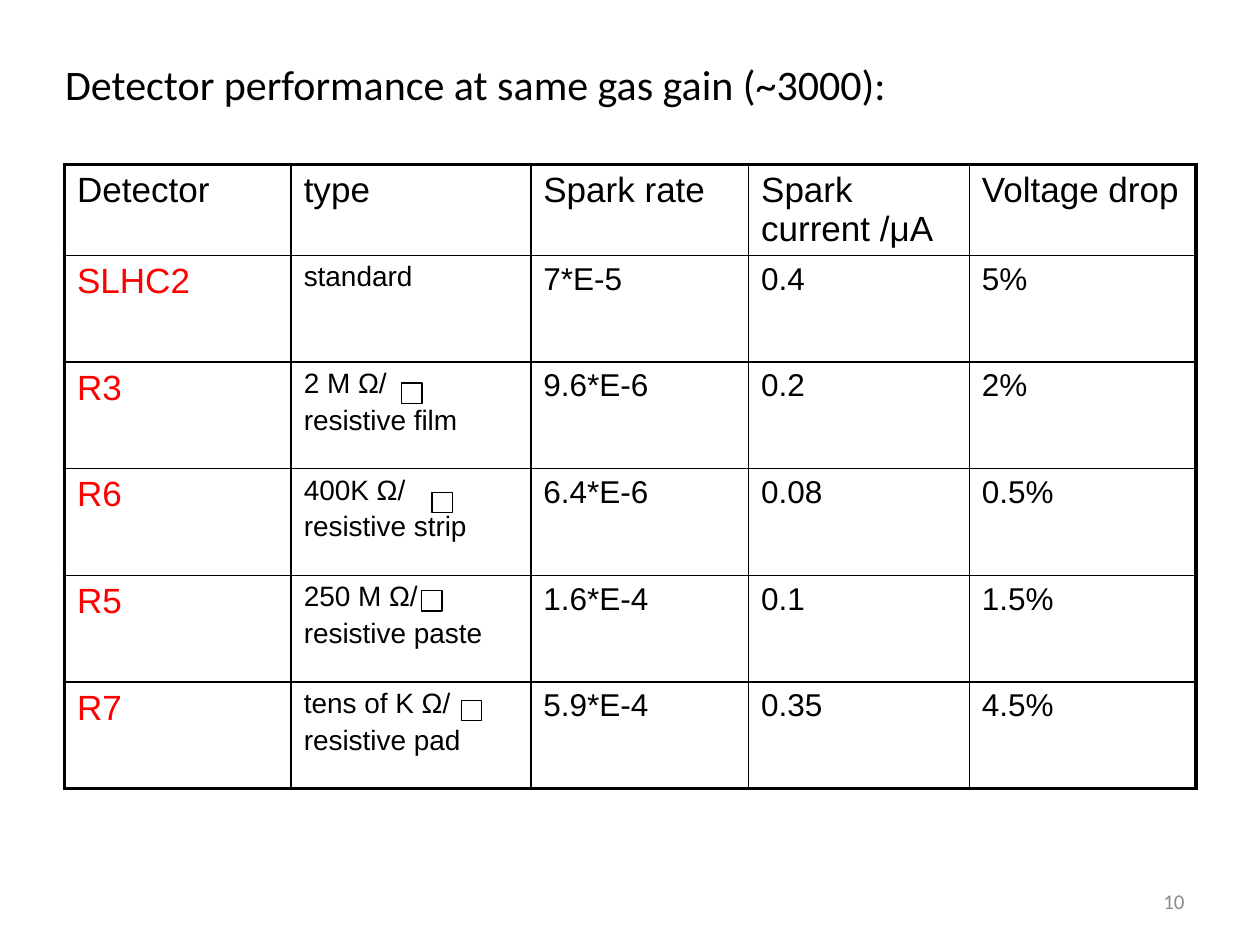
from typing import NamedTuple

from lxml import etree
from pptx import Presentation
from pptx import util as u
from pptx.dml.color import RGBColor
from pptx.enum import shapes, text
from pptx.oxml.ns import qn

BLACK = RGBColor(0x00, 0x00, 0x00)
RED = RGBColor(0xFF, 0x00, 0x00)
GREY = RGBColor(0x8C, 0x8C, 0x8C)

THIN, THICK = 1, 2.25
COLUMN_WIDTHS = (4.57, 4.83, 4.39, 4.45, 4.57)
HEADER_HEIGHT, ROW_HEIGHT = 1.82, 2.15
SQUARE_SIDE = 0.41


class Detector(NamedTuple):
    name: str
    kind: str
    spark_rate: str
    spark_current: str
    voltage_drop: str


class Square(NamedTuple):
    """Top left corner, in cm, of an ohm-per-square sign."""
    left: float
    top: float


HEADINGS = ("Detector", "type", "Spark rate", "Spark current /μA", "Voltage drop")
DETECTORS = (
    Detector("SLHC2", "standard", "7*E-5", "0.4", "5%"),
    Detector("R3", "2 M Ω/\nresistive film", "9.6*E-6", "0.2", "2%"),
    Detector("R6", "400K Ω/\nresistive strip", "6.4*E-6", "0.08", "0.5%"),
    Detector("R5", "250 M Ω/\nresistive paste", "1.6*E-4", "0.1", "1.5%"),
    Detector("R7", "tens of K Ω/\nresistive pad", "5.9*E-4", "0.35", "4.5%"),
)
SQUARES = (Square(8.1, 7.72), Square(8.71, 9.93), Square(8.5, 11.91), Square(9.3, 14.12))


def write(frame, content: str, *, size: float, font: str = "Arial",
          color: RGBColor = BLACK, align=text.PP_ALIGN.LEFT, gap: float = 0) -> None:
    """Fill a text frame, one paragraph a line, with gap points between them."""
    frame.word_wrap = True
    for index, line in enumerate(content.split("\n")):
        para = frame.paragraphs[0] if index == 0 else frame.add_paragraph()
        para.alignment = align
        para.space_before = u.Pt(gap if index else 0)
        span = para.add_run()
        span.text = line
        span.font.size = u.Pt(size)
        span.font.name = font
        span.font.color.rgb = color


def set_borders(cell, **widths: float) -> None:
    properties = cell._tc.get_or_add_tcPr()
    for side in "LRTB":
        line = etree.SubElement(properties, qn(f"a:ln{side}"), w=str(u.Pt(widths[side])))
        fill = etree.SubElement(line, qn("a:solidFill"))
        etree.SubElement(fill, qn("a:srgbClr"), val=str(BLACK))


def add_detector_table(page) -> None:
    rows = (HEADINGS, *DETECTORS)
    last_row, last_column = len(rows) - 1, len(HEADINGS) - 1
    height = HEADER_HEIGHT + last_row * ROW_HEIGHT
    table = page.shapes.add_table(
        len(rows), len(HEADINGS), u.Cm(1.3), u.Cm(3.32),
        u.Cm(sum(COLUMN_WIDTHS)), u.Cm(height)).table
    table.first_row = table.horz_banding = False
    for column, width in zip(table.columns, COLUMN_WIDTHS):
        column.width = u.Cm(width)

    body_formats = (dict(size=20, color=RED), dict(size=16, gap=3.2),
                    *[dict(size=18)] * 3)
    for r, values in enumerate(rows):
        table.rows[r].height = u.Cm(ROW_HEIGHT if r else HEADER_HEIGHT)
        for c, value in enumerate(values):
            cell = table.cell(r, c)
            set_borders(cell,
                        L=THICK if c == 0 else THIN,
                        R=THICK if c == last_column else THIN,
                        T=THICK if r == 0 else THIN,
                        B=THICK if r == last_row else THIN)
            cell.fill.background()
            write(cell.text_frame, value, **(body_formats[c] if r else dict(size=20)))


def add_square(page, square: Square) -> None:
    box = page.shapes.add_shape(
        shapes.MSO_SHAPE.RECTANGLE, u.Cm(square.left), u.Cm(square.top),
        u.Cm(SQUARE_SIDE), u.Cm(SQUARE_SIDE))
    box.shadow.inherit = False
    box.fill.background()
    box.line.color.rgb = BLACK
    box.line.width = u.Pt(0.75)


def main() -> None:
    deck = Presentation()
    deck.slide_width, deck.slide_height = u.Cm(25.4), u.Cm(19.05)
    page = deck.slides.add_slide(deck.slide_layouts[5])

    title = page.shapes.title
    title.left, title.top = u.Cm(1.06), u.Cm(1.06)
    title.width, title.height = u.Cm(23.6), u.Cm(1.3)
    title.text_frame.vertical_anchor = text.MSO_ANCHOR.TOP
    write(title.text_frame, "Detector performance at same gas gain (~3000):",
          size=24, font="Calibri")

    add_detector_table(page)
    for square in SQUARES:
        add_square(page, square)

    number = page.shapes.add_textbox(u.Cm(18.2), u.Cm(17.65), u.Cm(5.93), u.Cm(1.02))
    number.text_frame.vertical_anchor = text.MSO_ANCHOR.MIDDLE
    write(number.text_frame, "10", size=12, font="Calibri", color=GREY,
          align=text.PP_ALIGN.RIGHT)

    deck.save("out.pptx")


if __name__ == "__main__":
    main()
